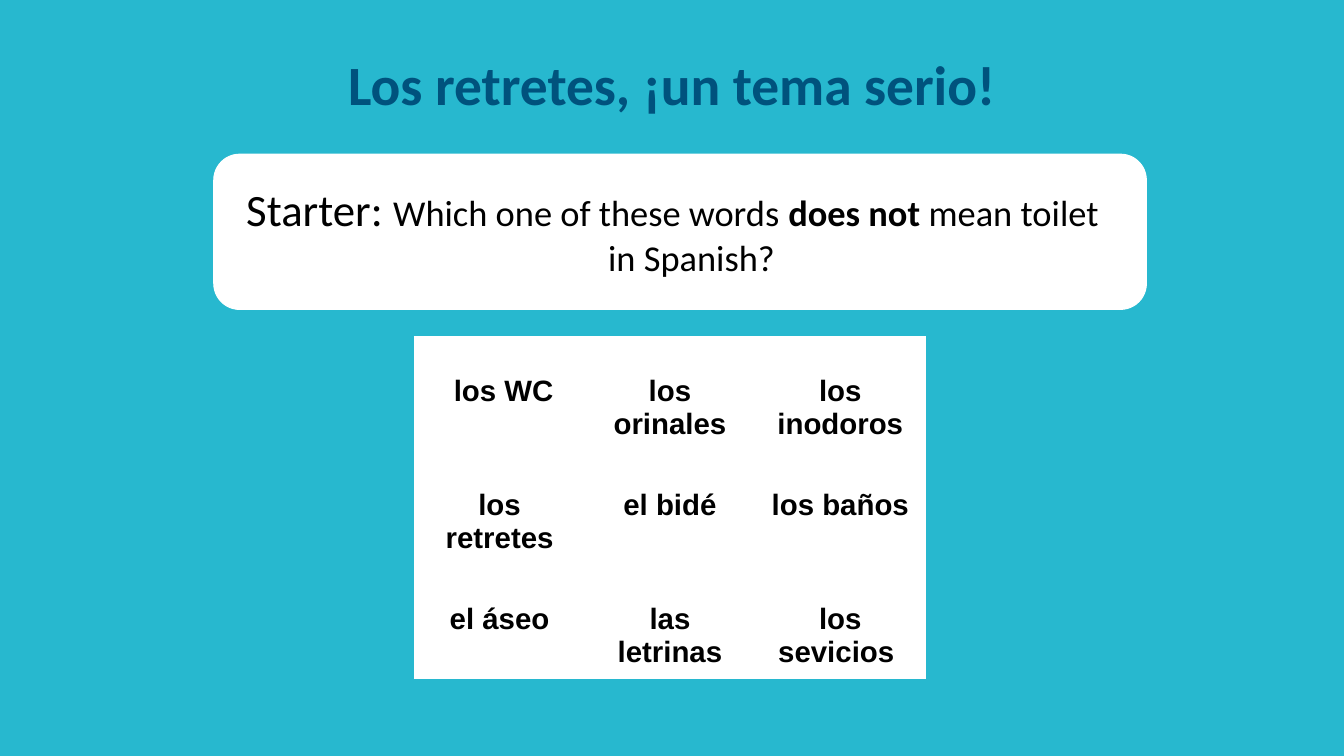
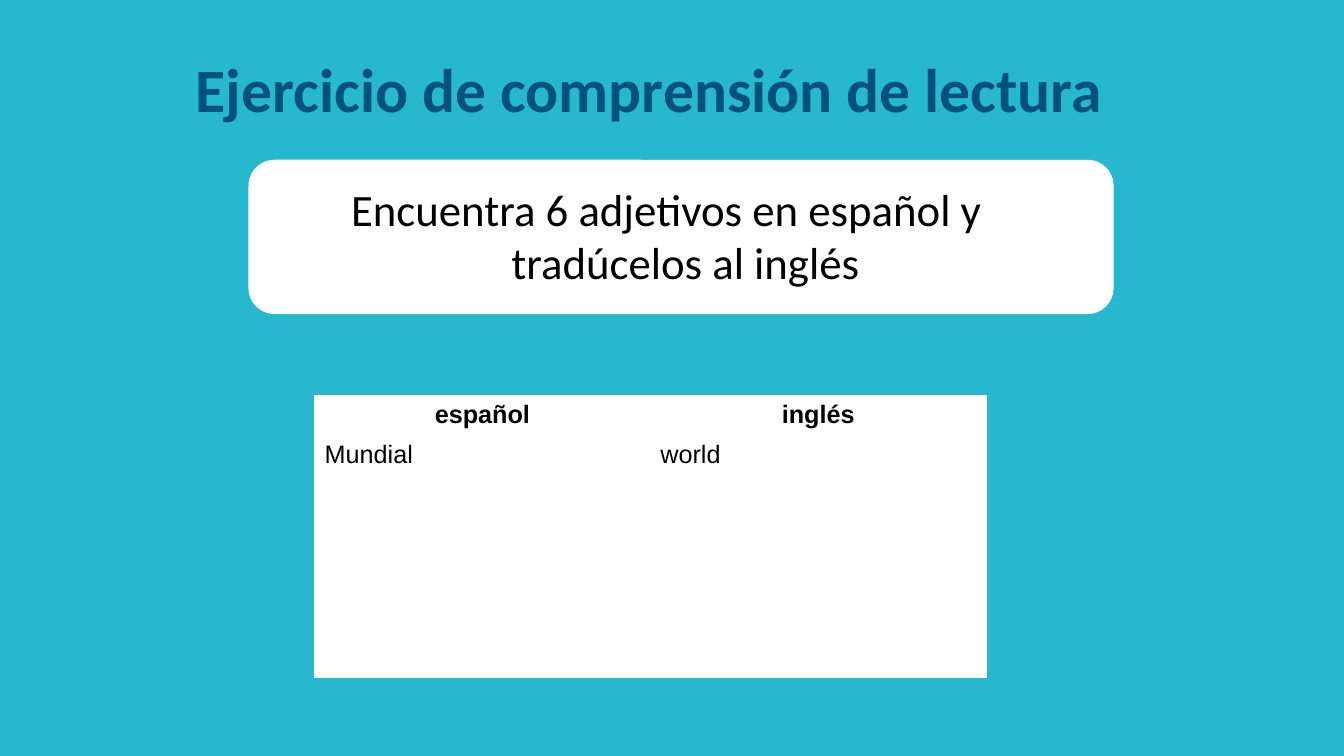
import pptx
import pptx.util
import pptx.dml.color
import pptx.enum.shapes
import pptx.enum.text

Inches = pptx.util.Inches
Pt = pptx.util.Pt
ALIGN = pptx.enum.text.PP_ALIGN
ANCHOR = pptx.enum.text.MSO_ANCHOR

COLORS = {"background": "27B8CF", "panel": "FFFFFF", "title": "00527D", "text": "000000"}


def rgb(name):
    return pptx.dml.color.RGBColor.from_string(COLORS[name])


def style(font, name, size, color="text", bold=False):
    font.name = name
    font.size = Pt(size)
    font.bold = bold
    font.color.rgb = rgb(color)


def add_slide(prs):
    s = prs.slides.add_slide(prs.slide_layouts[6])
    s.background.fill.solid()
    s.background.fill.fore_color.rgb = rgb("background")
    return s


def add_text_box(s, box, anchor=ANCHOR.TOP):
    tf = s.shapes.add_textbox(*map(Inches, box)).text_frame
    tf.word_wrap = True
    tf.vertical_anchor = anchor
    p = tf.paragraphs[0]
    p.alignment = ALIGN.CENTER
    return p


def add_title(s, text, box, size):
    p = add_text_box(s, box, ANCHOR.MIDDLE)
    p.text = text
    style(p.font, "Calibri", size, "title", True)


def add_panel(s, box):
    sp = s.shapes.add_shape(pptx.enum.shapes.MSO_SHAPE.ROUNDED_RECTANGLE, *map(Inches, box))
    sp.shadow.inherit = False
    sp.fill.solid()
    sp.fill.fore_color.rgb = rgb("panel")
    sp.line.color.rgb = rgb("panel")
    sp.line.width = Pt(0.75)


def add_instruction(s, box, runs):
    p = add_text_box(s, box)
    pPr = p._p.get_or_add_pPr()
    pPr.set("marL", str(Inches(0.38)))
    pPr.set("indent", str(-Inches(0.38)))
    for text, size, bold in runs:
        r = p.add_run()
        r.text = text
        style(r.font, "Calibri", size, bold=bold)


def add_table(s, left, top, col_width, row_height, rows, size, bold_rows, centered_rows, margin_top=0.05):
    n_rows, n_cols = len(rows), len(rows[0])
    table = s.shapes.add_table(n_rows, n_cols, Inches(left), Inches(top),
                               Inches(col_width * n_cols), Inches(row_height * n_rows)).table
    table.first_row = False
    table.horz_banding = False
    for i, row in enumerate(rows):
        for j, text in enumerate(row):
            cell = table.cell(i, j)
            cell.fill.solid()
            cell.fill.fore_color.rgb = rgb("panel")
            cell.margin_top = Inches(margin_top)
            p = cell.text_frame.paragraphs[0]
            p.text = text
            p.alignment = ALIGN.CENTER if i < centered_rows else ALIGN.LEFT
            style(p.font, "Arial", size, bold=i < bold_rows)


def build_starter(prs):
    s = add_slide(prs)
    add_panel(s, (2.12, 1.53, 9.25, 1.54))
    add_instruction(s, (2.17, 1.75, 9, 1.3), [
        ("Starter: ", 32, False),
        ("Which one of these words ", 26, False),
        ("does not ", 26, True),
        ("mean toilet in Spanish?", 26, False),
    ])
    words = [
        [" los WC", "los orinales", "los inodoros"],
        ["los retretes", "el bidé", "los baños"],
        ["el áseo", "las letrinas", "los sevicios "],
    ]
    add_table(s, 4.11, 3.34, 1.69, 1.12, words, 21,
              bold_rows=3, centered_rows=3, margin_top=0.38)
    add_title(s, "Los retretes, ¡un tema serio!", (1.8, 0.2, 9.73, 1.25), 39.6)


def build_reading(prs):
    s = add_slide(prs)
    add_panel(s, (2.47, 1.59, 8.57, 1.52))
    add_title(s, "Ejercicio de comprensión de lectura", (0.86, 0.25, 11.17, 1.25), 44)
    add_instruction(s, (2.94, 1.75, 7.34, 1.37), [
        ("Encuentra 6 adjetivos en español y tradúcelos al inglés", 32, False),
    ])
    rows = [["español", "inglés"], ["Mundial", "world"]] + [["", ""]] * 5
    add_table(s, 3.12, 3.92, 3.33, 0.39, rows, 18, bold_rows=1, centered_rows=1)


def main():
    prs = pptx.Presentation()
    prs.slide_width = Inches(13.33)
    prs.slide_height = Inches(7.5)
    build_starter(prs)
    build_reading(prs)
    prs.save("out.pptx")


if __name__ == "__main__":
    main()
